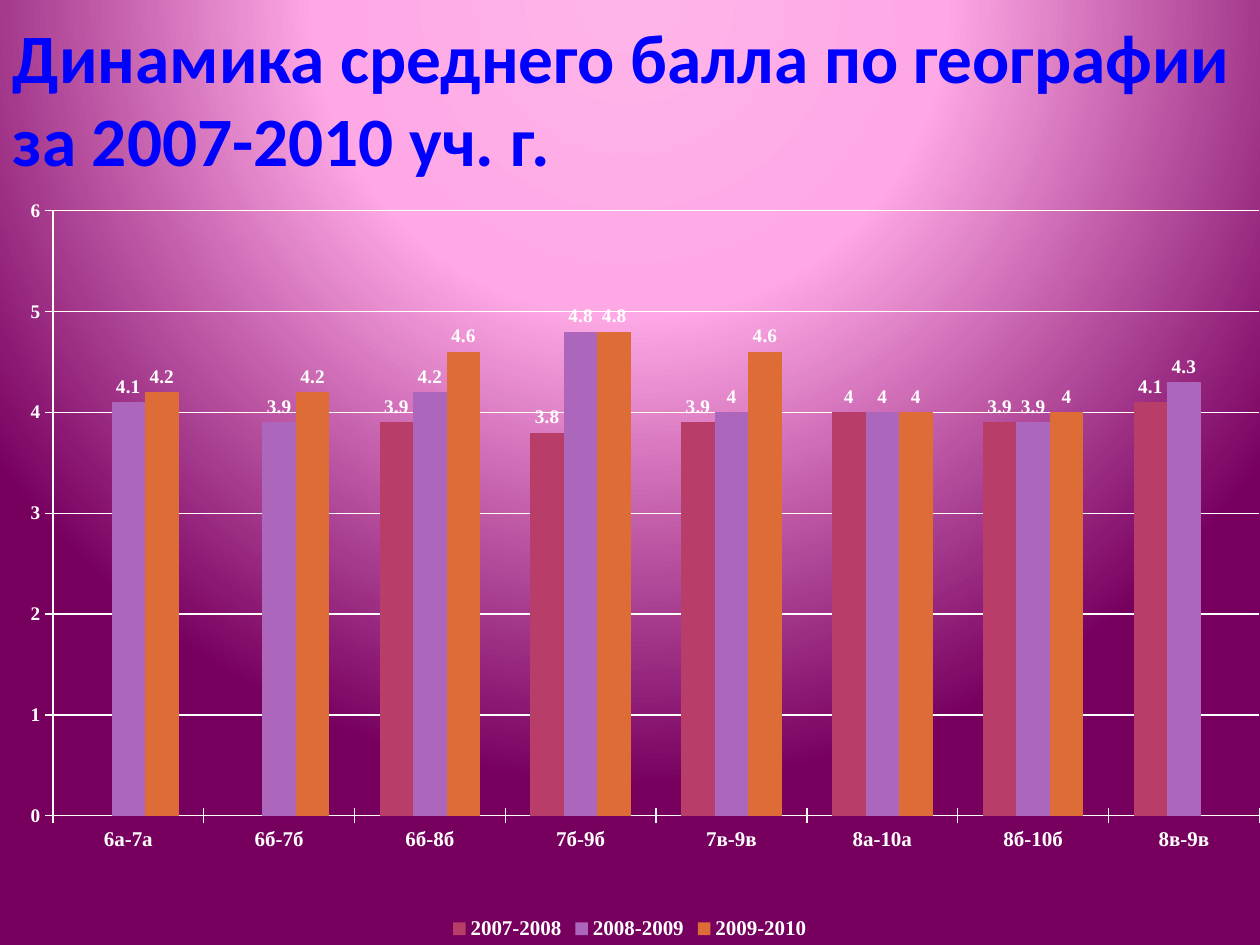
from pptx import Presentation
from pptx.chart.data import CategoryChartData
from pptx.dml.color import RGBColor
from pptx.enum.chart import (XL_CHART_TYPE, XL_LABEL_POSITION,
                             XL_LEGEND_POSITION, XL_TICK_MARK)
from pptx.enum.text import MSO_ANCHOR, MSO_AUTO_SIZE, PP_ALIGN
from pptx.oxml import parse_xml
from pptx.oxml.ns import nsdecls
from pptx.util import Inches, Pt

COLUMNS = XL_CHART_TYPE.COLUMN_CLUSTERED
OUTSIDE = XL_LABEL_POSITION.OUTSIDE_END
BOTTOM = XL_LEGEND_POSITION.BOTTOM
CROSS = XL_TICK_MARK.CROSS
NO_TICK = XL_TICK_MARK.NONE
MIDDLE = MSO_ANCHOR.MIDDLE
LEFT = PP_ALIGN.LEFT
NO_FIT = MSO_AUTO_SIZE.NONE

WHITE = RGBColor(0xFF, 0xFF, 0xFF)
BLUE = RGBColor(0x00, 0x00, 0xFF)
ROSE = RGBColor(0xB8, 0x3D, 0x68)
VIOLET = RGBColor(0xAC, 0x66, 0xBB)
ORANGE = RGBColor(0xDE, 0x6C, 0x36)

# Content
TITLE = "Динамика среднего балла по географии за 2007-2010 уч. г."
GRADES = ["6а-7а", "6б-7б", "6б-8б", "7б-9б", "7в-9в", "8а-10а", "8б-10б", "8в-9в"]
YEARS = [
    ("2007-2008", ROSE, [None, None, 3.9, 3.8, 3.9, 4, 3.9, 4.1]),
    ("2008-2009", VIOLET, [4.1, 3.9, 4.2, 4.8, 4, 4, 3.9, 4.3]),
    ("2009-2010", ORANGE, [4.2, 4.2, 4.6, 4.8, 4.6, 4, 4, None]),
]
STOPS = [(0, "FFB4E9"), (40, "FEA8E5"), (100, "77005F")]
PLOT = {"x": 0.042, "y": 0.032, "w": 0.958, "h": 0.798}


def set_font(font, size, color=WHITE, name="Times New Roman", bold=True):
    font.size = Pt(size)
    font.name = name
    font.bold = bold
    font.color.rgb = color


def paint_back(slide):
    slide.background.fill.solid()
    solid = slide.element.xpath(".//p:bgPr/a:solidFill")[0]
    stops = "".join(f'<a:gs pos="{pos * 1000}"><a:srgbClr val="{color}"/></a:gs>'
                    for pos, color in STOPS)
    grad = parse_xml(
        f'<a:gradFill {nsdecls("a")} rotWithShape="1"><a:gsLst>{stops}</a:gsLst>'
        '<a:path path="circle"><a:fillToRect l="50000" t="-80000" r="50000" b="180000"/>'
        '</a:path></a:gradFill>')
    solid.getparent().replace(solid, grad)


def place_plot(chart):
    area = chart.element.xpath(".//c:plotArea")[0]
    for old in area.xpath("./c:layout"):
        area.remove(old)
    modes = "".join(f'<c:{key}Mode val="edge"/>' for key in "xy")
    sizes = "".join(f'<c:{key} val="{val}"/>' for key, val in PLOT.items())
    area.insert(0, parse_xml(
        f'<c:layout {nsdecls("c")}><c:manualLayout><c:layoutTarget val="inner"/>'
        f'{modes}{sizes}</c:manualLayout></c:layout>'))


def add_scores(slide):
    data = CategoryChartData()
    data.categories = GRADES
    for name, _, vals in YEARS:
        data.add_series(name, vals)
    chart = slide.shapes.add_chart(COLUMNS, Inches(0), Inches(1.48),
                                   Inches(10), Inches(6.02), data).chart
    set_font(chart.font, 10, name="Calibri", bold=False)
    chart.has_title = False
    place_plot(chart)

    # Columns and their labels
    plot = chart.plots[0]
    plot.gap_width = 150
    plot.overlap = 0
    plot.vary_by_categories = False
    for series, (_, color, _) in zip(plot.series, YEARS):
        series.format.fill.solid()
        series.format.fill.fore_color.rgb = color
        series.invert_if_negative = False
        labels = series.data_labels
        labels.show_value = True
        labels.position = OUTSIDE
        set_font(labels.font, 11)

    # Axes and grid
    grades, scores = chart.category_axis, chart.value_axis
    scores.minimum_scale, scores.maximum_scale, scores.major_unit = 0, 6, 1
    scores.has_major_gridlines = True
    for axis, size in ((grades, 12), (scores, 11)):
        axis.major_tick_mark = CROSS
        axis.minor_tick_mark = NO_TICK
        set_font(axis.tick_labels.font, size)
    for part in (grades, scores, scores.major_gridlines):
        part.format.line.color.rgb = WHITE
        part.format.line.width = Pt(0.75)

    # Legend
    chart.has_legend = True
    chart.legend.position = BOTTOM
    chart.legend.include_in_layout = False
    set_font(chart.legend.font, 12)


def set_title(slide):
    title = slide.shapes.title
    title.left, title.top = Inches(0), Inches(0)
    title.width, title.height = Inches(10), Inches(1.55)
    frame = title.text_frame
    frame.word_wrap = True
    frame.auto_size = NO_FIT
    frame.vertical_anchor = MIDDLE
    para = frame.paragraphs[0]
    para.alignment = LEFT
    run = para.add_run()
    run.text = TITLE
    set_font(run.font, 39.6, BLUE, "Calibri")


def main():
    deck = Presentation()
    deck.slide_width, deck.slide_height = Inches(10), Inches(7.5)
    slide = deck.slides.add_slide(deck.slide_layouts[5])
    paint_back(slide)
    add_scores(slide)
    set_title(slide)
    deck.save("out.pptx")


if __name__ == "__main__":
    main()
